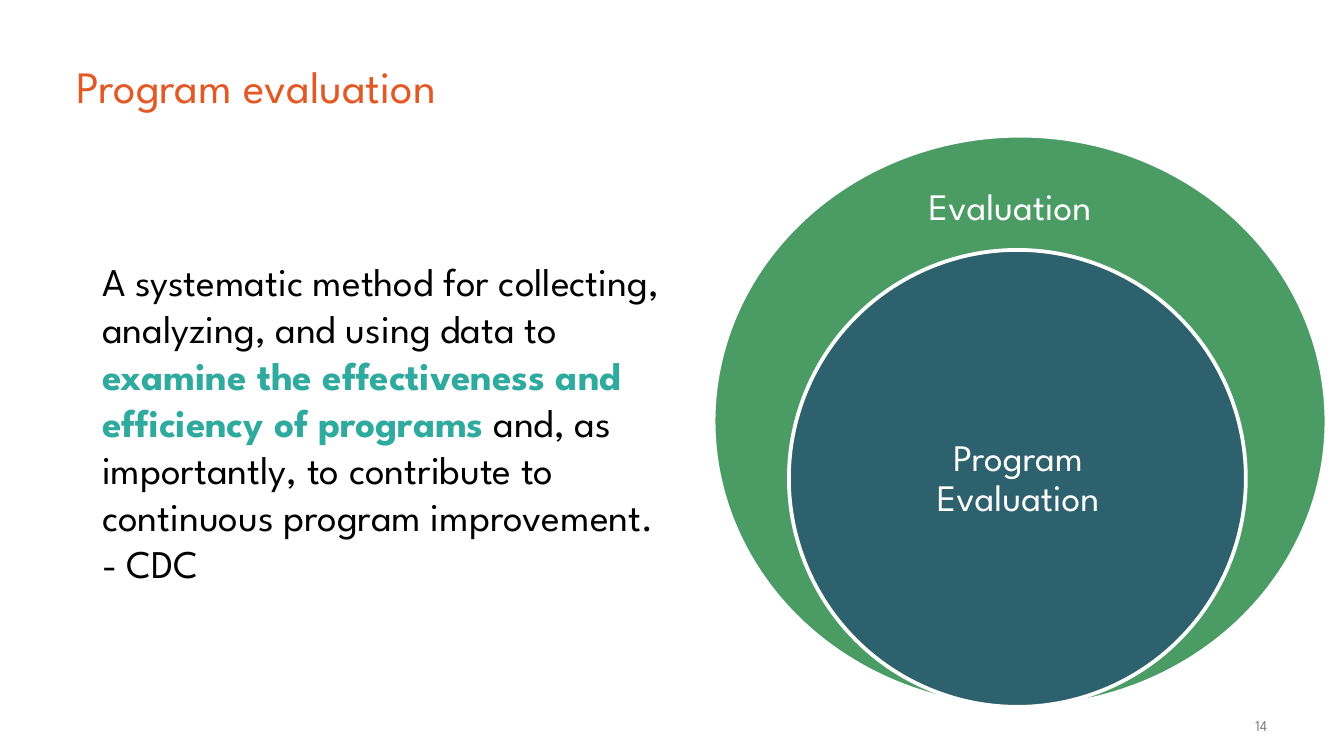
from dataclasses import dataclass

from pptx import Presentation
from pptx.dml.color import RGBColor
from pptx.enum.shapes import MSO_SHAPE
from pptx.enum.text import MSO_ANCHOR, MSO_AUTO_SIZE, PP_ALIGN
from pptx.shapes.autoshape import Shape
from pptx.slide import Slide
from pptx.util import Inches, Pt

WHITE = RGBColor(0xFF, 0xFF, 0xFF)
BLACK = RGBColor(0x00, 0x00, 0x00)
GRAY = RGBColor(0x7F, 0x7F, 0x7F)
ORANGE = RGBColor(0xE3, 0x59, 0x25)
TEAL = RGBColor(0x2F, 0xAA, 0x9F)
GREEN = RGBColor(0x4A, 0x9C, 0x64)
NAVY = RGBColor(0x2D, 0x61, 0x6E)
FONT = "League Spartan"
WIDTH = Inches(10)
HEIGHT = WIDTH * 9 // 16

Box = tuple[float, float, float, float]


@dataclass(frozen=True)
class Run:
    text: str
    color: RGBColor
    bold: bool = False


@dataclass(frozen=True)
class Label:
    box: Box
    runs: tuple[Run, ...]
    size: float
    insets: Box = (0.07, 0.04, 0.07, 0.04)
    align: PP_ALIGN = PP_ALIGN.LEFT
    anchor: MSO_ANCHOR = MSO_ANCHOR.MIDDLE
    before: float = 0
    spacing: float = 1.0


@dataclass(frozen=True)
class Ring:
    box: Box
    fill: RGBColor
    label: Label


def apply(target: object, values: dict) -> None:
    for name, value in values.items():
        setattr(target, name, value)


def place(shape: Shape, box: Box) -> None:
    sides = ("left", "top", "width", "height")
    apply(shape, dict(zip(sides, map(Inches, box))))


def write(shape: Shape, label: Label) -> None:
    frame = shape.text_frame
    sides = ("margin_left", "margin_top", "margin_right", "margin_bottom")
    apply(frame, dict(zip(sides, map(Inches, label.insets))))
    apply(frame, {
        "word_wrap": True,
        "auto_size": MSO_AUTO_SIZE.NONE,
        "vertical_anchor": label.anchor,
    })
    para = frame.paragraphs[0]
    apply(para, {
        "alignment": label.align,
        "space_before": Pt(label.before),
        "line_spacing": label.spacing,
    })
    for part in label.runs:
        run = para.add_run()
        run.text = part.text
        apply(run.font, {"name": FONT, "size": Pt(label.size), "bold": part.bold})
        run.font.color.rgb = part.color


def add_label(slide: Slide, label: Label) -> None:
    write(slide.shapes.add_textbox(*map(Inches, label.box)), label)


def add_ring(slide: Slide, ring: Ring) -> None:
    oval = slide.shapes.add_shape(MSO_SHAPE.OVAL, *map(Inches, ring.box))
    oval.shadow.inherit = False
    oval.fill.solid()
    oval.fill.fore_color.rgb = ring.fill
    oval.line.color.rgb = WHITE
    oval.line.width = Pt(2)
    add_label(slide, ring.label)


def ring_label(text: str, box: Box) -> Label:
    return Label(box, (Run(text, WHITE),), 20, (0.16,) * 4, PP_ALIGN.CENTER, spacing=0.9)


TITLE = Label((0.5, 0.17, 9, 0.94), (Run("Program evaluation", ORANGE),), 24)
BODY = Label(
    (0.5, 1.21, 4.5, 3.86),
    (
        Run("A systematic method for collecting, analyzing, and using data to ", BLACK),
        Run("examine the effectiveness and efficiency of programs", TEAL, True),
        Run(" and, as importantly, to contribute to continuous program improvement. - CDC", BLACK),
    ),
    21,
    insets=(0.26, 0.04, 0.07, 0.04),
    before=3,
)
NUMBER = Label(
    (8.57, 5.29, 0.93, 0.18),
    (Run("14", GRAY),),
    8,
    align=PP_ALIGN.RIGHT,
    anchor=MSO_ANCHOR.TOP,
)
RINGS = (
    Ring((5.31, 1.01, 4.56, 4.25), GREEN,
         ring_label("Evaluation", (6.41, 1.23, 2.21, 0.64))),
    Ring((5.87, 1.86, 3.4, 3.4), NAVY,
         ring_label("Program Evaluation", (6.57, 3.26, 2.01, 0.61))),
)


def main() -> None:
    deck = Presentation()
    apply(deck, {"slide_width": WIDTH, "slide_height": HEIGHT})
    slide = deck.slides.add_slide(deck.slide_layouts[5])
    title = slide.shapes.title
    place(title, TITLE.box)
    write(title, TITLE)
    for label in (BODY, NUMBER):
        add_label(slide, label)
    for ring in RINGS:
        add_ring(slide, ring)
    deck.save("out.pptx")


if __name__ == "__main__":
    main()
